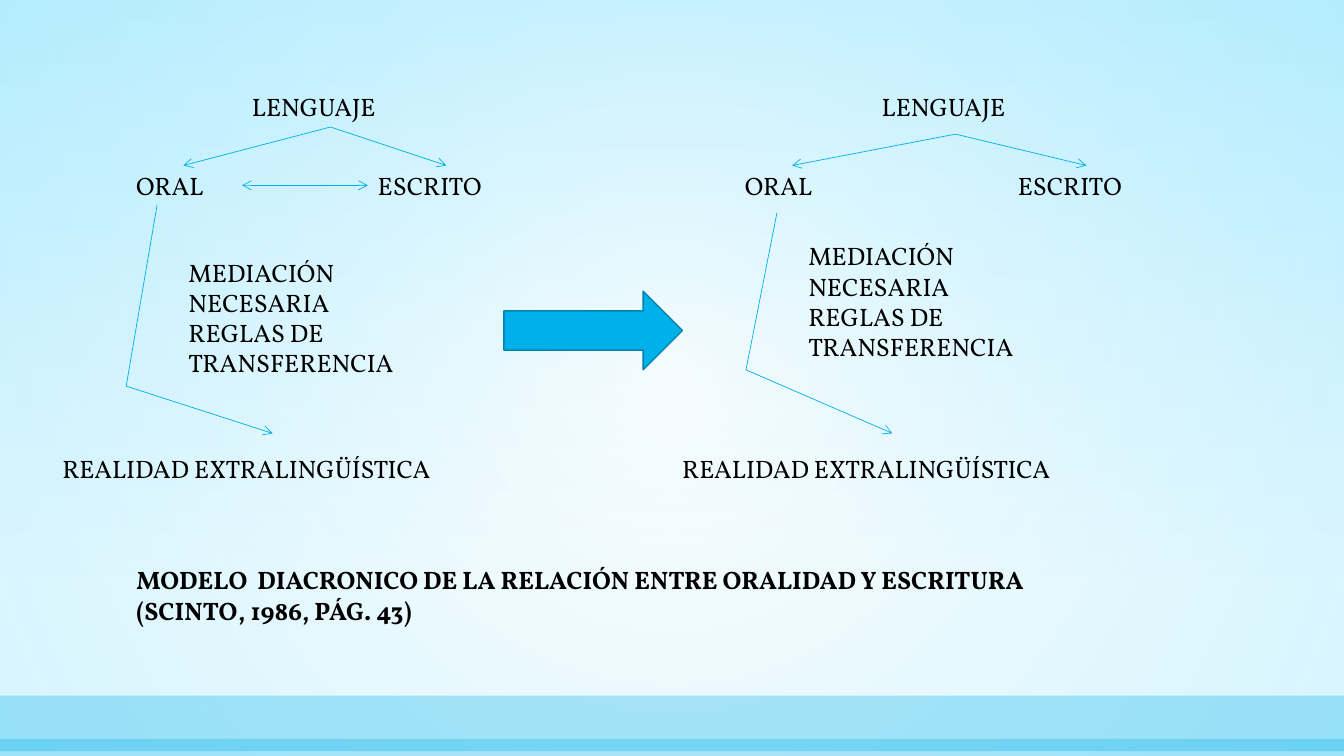
from lxml import etree
from pptx import Presentation
from pptx import util as u
from pptx.dml.color import RGBColor
from pptx.enum import shapes, text
from pptx.oxml import parse_xml
from pptx.oxml.ns import nsdecls, qn

BLUE = RGBColor(0x00, 0xB0, 0xEA)
EDGE = RGBColor(0x00, 0x82, 0xAD)
PALE = RGBColor(0xC8, 0xF1, 0xFF)
SKY = RGBColor(0x91, 0xE4, 0xFF)
WHITE = RGBColor(0xFF, 0xFF, 0xFF)
BLACK = RGBColor(0x00, 0x00, 0x00)
WIDE, HIGH = 33.87, 19.05


def write(frame, lines, size=18, bold=False, color=BLACK, font="Vollkorn"):
    frame.word_wrap = True
    frame.auto_size = text.MSO_AUTO_SIZE.NONE
    frame.vertical_anchor = text.MSO_ANCHOR.TOP
    for i, line in enumerate(lines):
        para = frame.paragraphs[0] if i == 0 else frame.add_paragraph()
        para.alignment = text.PP_ALIGN.LEFT
        para.line_spacing = 1.0
        para.space_before = u.Pt(0)
        run = para.add_run()
        run.text = line
        run.font.name = font
        run.font.size = u.Pt(size)
        run.font.bold = bold
        run.font.color.rgb = color


class Board:
    def __init__(self, slide, color=BLUE, edge=EDGE, thin=0.5):
        self.slide = slide
        self.color, self.edge, self.thin = color, edge, thin

    def back(self, top, end, stop):
        fill = self.slide.background.fill
        fill.gradient()
        fill.gradient_angle = 270
        for mark, color, pos in zip(fill.gradient_stops, (top, end), (0, stop)):
            mark.color.rgb = color
            mark.position = pos

    def shape(self, kind, x, y, w, h, line=None):
        item = self.slide.shapes.add_shape(kind, *map(u.Cm, (x, y, w, h)))
        item.shadow.inherit = False
        item.fill.solid()
        item.fill.fore_color.rgb = self.color
        if line:
            item.line.color.rgb = self.edge
            item.line.width = u.Pt(line)
        else:
            item.line.fill.background()
        return item

    def band(self, y, h, alpha):
        item = self.shape(shapes.MSO_SHAPE.RECTANGLE, 0, y, WIDE, h)
        tint = item.fill._xPr.find(qn("a:solidFill"))[0]
        etree.SubElement(tint, qn("a:alpha"), val=str(alpha * 1000))

    def glow(self, *stops):
        item = self.shape(shapes.MSO_SHAPE.RECTANGLE, 0, 0, WIDE, HIGH)
        marks = "".join(
            f'<a:gs pos="{pos * 1000}"><a:srgbClr val="{color}">'
            f'<a:alpha val="{alpha * 1000}"/></a:srgbClr></a:gs>'
            for pos, color, alpha in stops)
        grad = parse_xml(
            f'<a:gradFill {nsdecls("a")}><a:gsLst>{marks}</a:gsLst>'
            '<a:path path="circle"><a:fillToRect l="50000" t="50000" '
            'r="50000" b="50000"/></a:path></a:gradFill>')
        props = item._element.spPr
        props.replace(props.find(qn("a:solidFill")), grad)

    def label(self, lines, x, y, w, h=1.02, **style):
        box = self.slide.shapes.add_textbox(*map(u.Cm, (x, y, w, h)))
        write(box.text_frame, lines, **style)

    def title(self, lines, x, y, w, h, **style):
        item = self.slide.shapes.title
        item.left, item.top, item.width, item.height = map(u.Cm, (x, y, w, h))
        write(item.text_frame, lines, **style)
        self.slide.shapes._spTree.append(item._element)

    def line(self, start, end, *ends):
        item = self.slide.shapes.add_connector(
            shapes.MSO_CONNECTOR.STRAIGHT, *map(u.Cm, start + end))
        item.line.color.rgb = self.color
        item.line.width = u.Pt(self.thin)
        for name in ("headEnd", "tailEnd"):
            if name in ends:
                etree.SubElement(item.line._ln, qn("a:" + name), type="arrow")
        etree.SubElement(item._element.spPr, qn("a:effectLst"))

    def model(self, x, top, oral, script, rules, apex, tips, bend):
        self.label(["LENGUAJE"], top, 2.18, 5)
        self.label(["ORAL"], oral, 4.17, 2.92)
        self.label(["ESCRITO"], script, 4.17, 3.96)
        self.label(["MEDIACIÓN NECESARIA", "REGLAS DE TRANSFERENCIA"],
                   x + 3.18, rules, 6.35, 4.11)
        self.label(["REALIDAD EXTRALINGÜÍSTICA"], x, 11.3, 11.63)
        for tip in tips:
            self.line(apex, (tip, 4.17), "tailEnd")
        start, turn = bend
        knee = (x + 1.86, turn)
        self.line((x + 2.64, start), knee)
        self.line(knee, (x + 5.55, 10.92), "tailEnd")


def main():
    deck = Presentation()
    deck.slide_width, deck.slide_height = u.Cm(WIDE), u.Cm(HIGH)
    board = Board(deck.slides.add_slide(deck.slide_layouts[5]))
    board.back(PALE, WHITE, 0.79)
    board.glow((0, WHITE, 49), (100, SKY, 35))
    board.band(17.53, 1.4, 30)
    board.band(18.62, 0.43, 28)
    board.model(1.32, top=6.1, oral=3.18, script=9.27, rules=6.35,
                apex=(8.33, 3.2), tips=(4.62, 11.25), bend=(5.16, 9.73))
    board.line((6.1, 4.67), (9.27, 4.67), "headEnd", "tailEnd")
    board.model(16.94, top=21.97, oral=18.52, script=25.4, rules=5.94,
                apex=(24.08, 3.38), tips=(19.96, 27.38), bend=(5.36, 9.32))
    board.shape(shapes.MSO_SHAPE.RIGHT_ARROW, 12.7, 7.34, 4.5, 1.98, line=1)
    board.title(["MODELO  DIACRONICO DE LA RELACIÓN ENTRE ORALIDAD Y ESCRITURA",
                 "(SCINTO, 1986, PÁG. 43)"], 3.18, 14.1, 26.47, 1.8, bold=True)
    deck.save("out.pptx")


if __name__ == "__main__":
    main()
